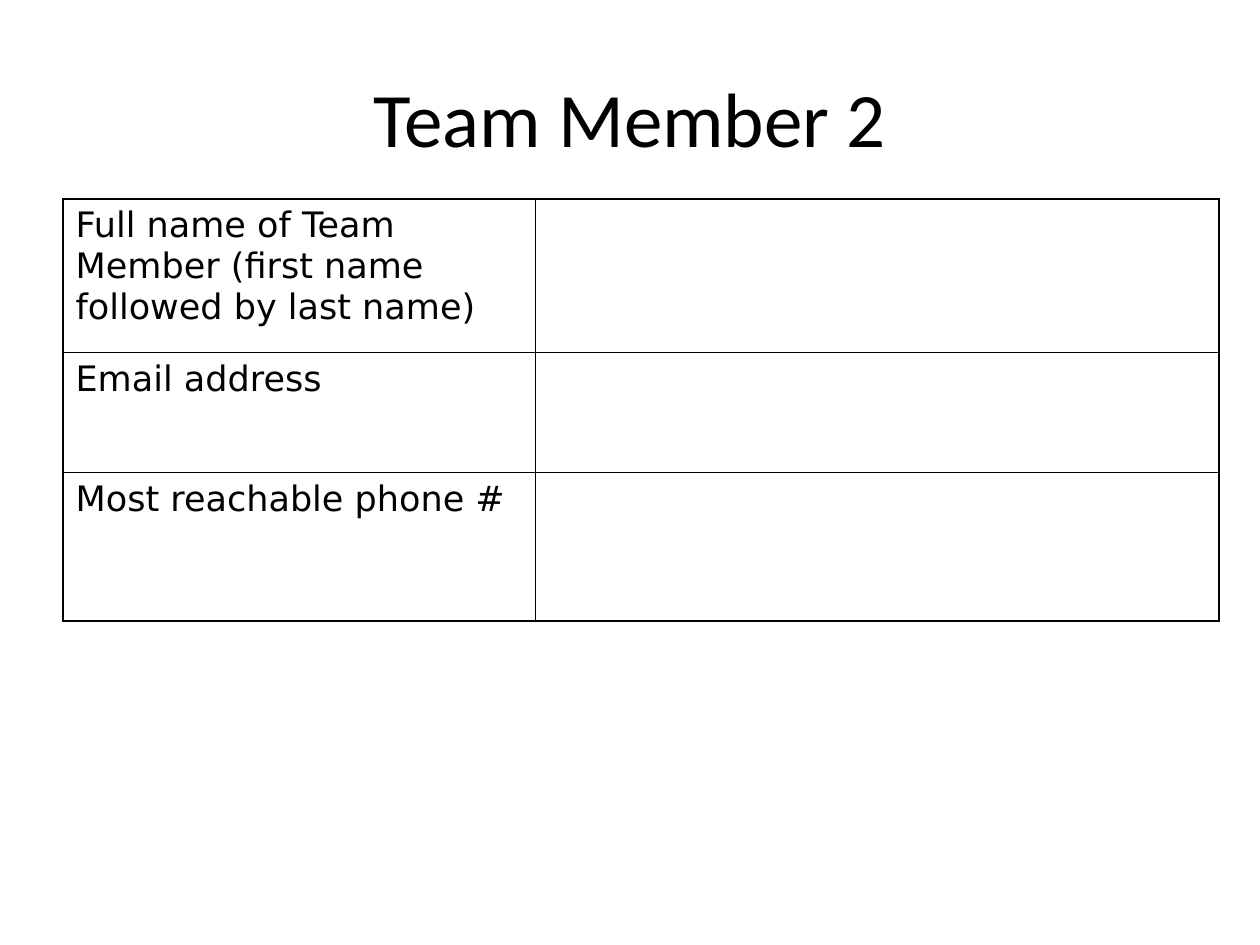
from lxml.etree import SubElement
from pptx import Presentation
from pptx.dml.color import RGBColor
from pptx.enum.text import MSO_ANCHOR, PP_ALIGN
from pptx.oxml.ns import qn
from pptx.util import Cm, Pt

BLACK = RGBColor(0, 0, 0)
LABELS = [
    "Full name of Team Member (first name followed by last name)",
    "Email address",
    "Most reachable phone #",
]
ROW_HEIGHTS = [Cm(3.1), Cm(2.41), Cm(3)]
COLUMN_WIDTHS = [Cm(9.53), Cm(13.77)]


def add_borders(cell):
    properties = cell._tc.get_or_add_tcPr()
    for position, side in enumerate(("a:lnL", "a:lnR", "a:lnT", "a:lnB")):
        line = SubElement(properties, qn(side), w=str(Pt(1)))
        properties.insert(position, line)
        fill = SubElement(line, qn("a:solidFill"))
        SubElement(fill, qn("a:srgbClr"), val=str(BLACK))


presentation = Presentation()
presentation.slide_width = Cm(25.4)
presentation.slide_height = Cm(19.05)
slide = presentation.slides.add_slide(presentation.slide_layouts[5])

heading = slide.shapes.title
heading.left, heading.top = Cm(1.27), Cm(0.76)
heading.width, heading.height = Cm(22.86), Cm(3.18)
heading.text_frame.text = "Team Member 2"
heading.text_frame.vertical_anchor = MSO_ANCHOR.MIDDLE
heading_line = heading.text_frame.paragraphs[0]
heading_line.alignment = PP_ALIGN.CENTER
heading_line.font.name = "Calibri"
heading_line.font.size = Pt(44)
heading_line.font.color.rgb = BLACK

contact = slide.shapes.add_table(
    len(LABELS), 2, Cm(1.27), Cm(4.01), sum(COLUMN_WIDTHS), sum(ROW_HEIGHTS)
).table
contact.first_row = False
contact.horz_banding = False
for column, width in zip(contact.columns, COLUMN_WIDTHS):
    column.width = width
for row, height, label in zip(contact.rows, ROW_HEIGHTS, LABELS):
    row.height = height
    row.cells[0].text = label
    for cell in row.cells:
        cell.fill.background()
        add_borders(cell)
        entry = cell.text_frame.paragraphs[0]
        entry.font.name = "DejaVu Sans"
        entry.font.size = Pt(20)
        entry.font.color.rgb = BLACK

presentation.save("out.pptx")
